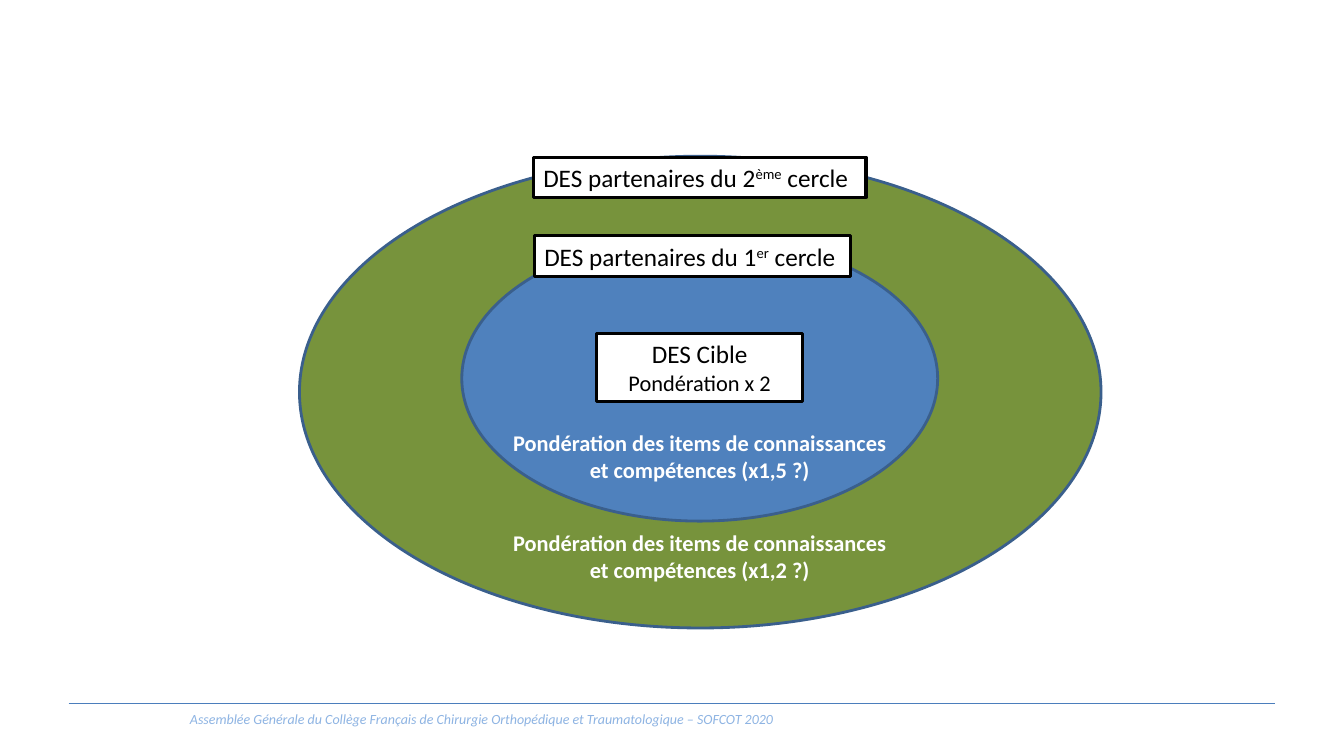
from pptx import Presentation
from pptx.dml.color import RGBColor
from pptx.enum.shapes import MSO_CONNECTOR, MSO_SHAPE
from pptx.enum.text import MSO_ANCHOR, PP_ALIGN
from pptx.oxml.ns import qn
from pptx.util import Inches, Pt
from lxml import etree

STRAIGHT = MSO_CONNECTOR.STRAIGHT
ELLIPSE, RECTANGLE = MSO_SHAPE.OVAL, MSO_SHAPE.RECTANGLE
TOP = MSO_ANCHOR.TOP
LEFT, CENTER = PP_ALIGN.LEFT, PP_ALIGN.CENTER
COLORS = {
    "white": "FFFFFF",
    "black": "000000",
    "outer": "77933C",
    "inner": "4F81BD",
    "outline": "3A5F8C",
    "rule": "4B7EBC",
    "footer": "8EB4E3",
}


def color(name):
    """Return the named colour."""
    return RGBColor.from_string(COLORS[name])


class CirclesSlide:
    """Holds the style and the slide being drawn."""

    font = "Calibri"

    def __init__(self, deck):
        """Add an empty page to the deck."""
        self.page = deck.slides.add_slide(deck.slide_layouts[6])

    def rule(self, left, right, top):
        """Draw a thin horizontal line."""
        line = self.page.shapes.add_connector(
            STRAIGHT, Inches(left), Inches(top), Inches(right), Inches(top))
        line.line.color.rgb = color("rule")
        line.line.width = Pt(0.75)
        etree.SubElement(line._element.spPr, qn("a:effectLst"))

    def shape(self, kind, area, fill, outline, width):
        """Draw a filled and outlined shape."""
        shape = self.page.shapes.add_shape(kind, *map(Inches, area))
        shape.shadow.inherit = False
        shape.fill.solid()
        shape.fill.fore_color.rgb = color(fill)
        shape.line.color.rgb = color(outline)
        shape.line.width = Pt(width)
        return shape

    def fill_text(self, box, lines, ink, align=CENTER, bold=False, italic=False):
        """Fill a box with lines of (size, base text, superscript, rest)."""
        frame = box.text_frame
        frame.word_wrap = True
        frame.vertical_anchor = TOP
        for index, (size, *parts) in enumerate(lines):
            para = frame.add_paragraph() if index else frame.paragraphs[0]
            para.alignment = align
            para.font.name = self.font
            para.font.size = Pt(size)
            para.font.bold = bold
            para.font.italic = italic
            para.font.color.rgb = color(ink)
            for position, part in enumerate(parts):
                span = para.add_run()
                span.text = part
                if position == 1:
                    span._r.get_or_add_rPr().set("baseline", "30000")

    def ellipse(self, area, fill):
        """Draw one circle of partners."""
        self.shape(ELLIPSE, area, fill, "outline", 2)

    def label(self, area, lines, align=LEFT):
        """Draw a white label with a black frame."""
        box = self.shape(RECTANGLE, area, "white", "black", 2.25)
        self.fill_text(box, lines, "black", align)

    def text(self, area, lines, ink, **style):
        """Draw a text box without a frame."""
        box = self.page.shapes.add_textbox(*map(Inches, area))
        self.fill_text(box, lines, ink, **style)


def main():
    """Build and save the deck."""
    deck = Presentation()
    deck.slide_width, deck.slide_height = Inches(13.33), Inches(7.5)
    slide = CirclesSlide(deck)

    slide.rule(0.68, 12.65, 6.98)
    slide.text((0.68, 7, 8.19, 0.27),
               [(10, "Assemblée Générale du Collège Français de Chirurgie "
                     "Orthopédique et Traumatologique – SOFCOT 2020")],
               "footer", italic=True)

    slide.ellipse((2.97, 1.55, 7.95, 4.68), "outer")
    slide.ellipse((4.58, 2.34, 4.72, 2.83), "inner")

    slide.label((5.92, 3.31, 2.04, 0.67),
                [(18, "DES Cible"), (16, "Pondération x 2")], CENTER)
    for area, number, suffix in (((5.3, 2.34, 3.14, 0.4), "1", "er"),
                                 ((5.29, 1.56, 3.3, 0.4), "2", "ème")):
        slide.label(area, [(18, f"DES partenaires du {number}", suffix, " cercle")])

    for top, weight in ((4.21, "1,5"), (5.2, "1,2")):
        slide.text((4.38, top, 5.12, 0.64),
                   [(16, "Pondération des items de connaissances"),
                    (16, f"et compétences (x{weight} ?)")],
                   "white", bold=True)

    deck.save("out.pptx")


if __name__ == "__main__":
    main()
